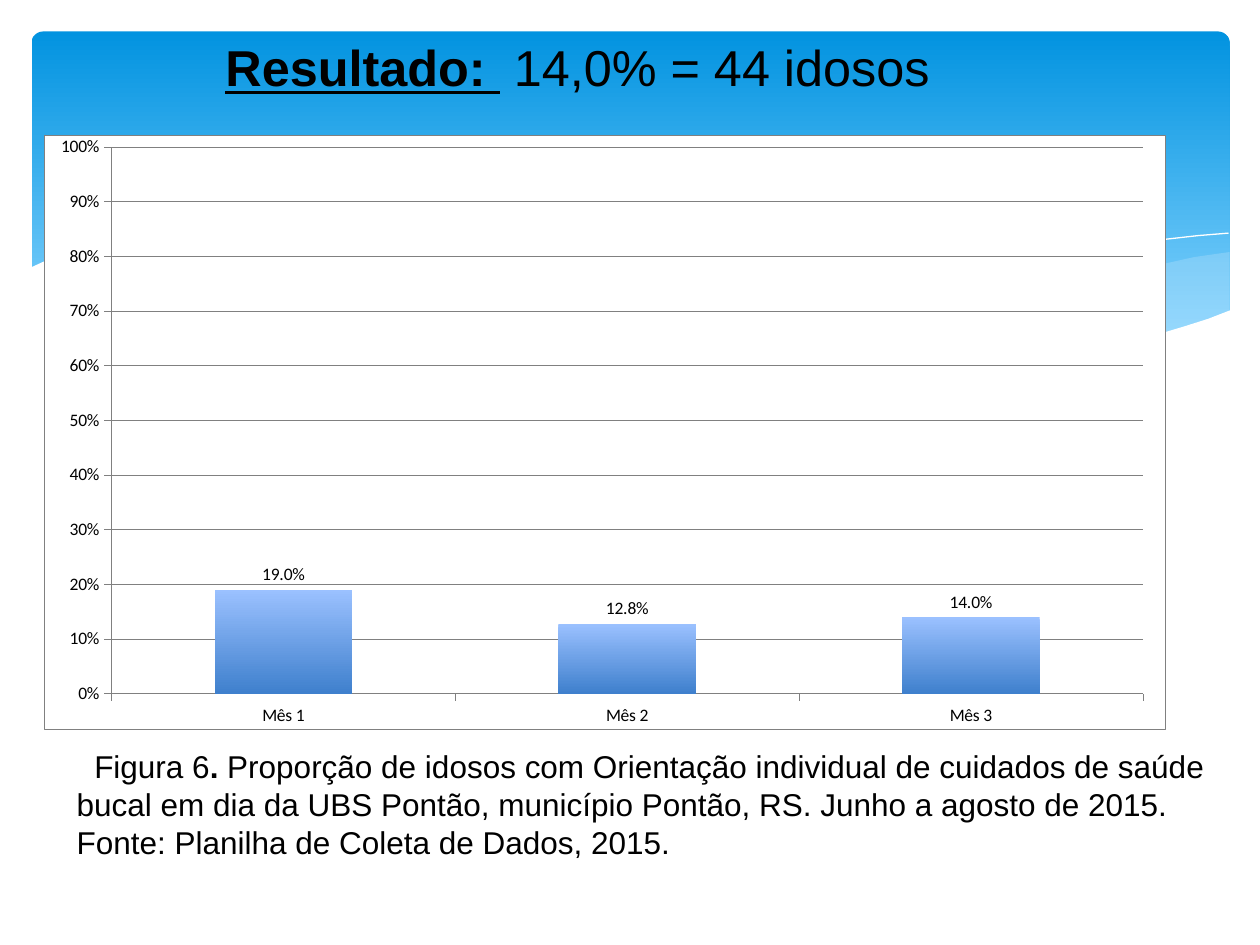
from lxml import etree
from pptx import Presentation
from pptx.chart.data import CategoryChartData
from pptx.dml.color import RGBColor
from pptx.enum.chart import XL_CHART_TYPE, XL_LABEL_POSITION, XL_TICK_MARK
from pptx.enum.shapes import MSO_SHAPE
from pptx.enum.text import MSO_ANCHOR, MSO_AUTO_SIZE, PP_ALIGN
from pptx.oxml import parse_xml
from pptx.oxml.ns import nsdecls, qn
from pptx.util import Inches, Pt

COLUMNS = XL_CHART_TYPE.COLUMN_CLUSTERED
OUTSIDE_END = XL_LABEL_POSITION.OUTSIDE_END
TICK_OUT = XL_TICK_MARK.OUTSIDE
ROUNDED = MSO_SHAPE.ROUNDED_RECTANGLE
MIDDLE = MSO_ANCHOR.MIDDLE
NO_FIT, GROW = MSO_AUTO_SIZE.NONE, MSO_AUTO_SIZE.SHAPE_TO_FIT_TEXT
CENTER, LEFT = PP_ALIGN.CENTER, PP_ALIGN.LEFT

COLORS = {
    "text": "000000", "white": "FFFFFF", "wave": "C6E7FC", "axis": "808080",
    "banner_top": "0293E0", "banner_bottom": "83D3FE",
    "bar_top": "9BC1FF", "bar_bottom": "3F80CD",
}

RIGHT_WAVE = [
    (9.76, 2), (9.48, 2.04), (9.21, 2.1), (8.91, 2.16), (8.61, 2.23), (8.05, 2.37),
    (7.53, 2.48), (7.06, 2.57), (6.61, 2.65), (7.05, 2.71), (7.45, 2.75), (7.81, 2.77),
    (8.14, 2.78), (8.44, 2.77), (8.72, 2.74), (8.97, 2.7), (9.21, 2.65), (9.42, 2.59),
    (9.63, 2.52), (9.76, 2.47)]
MIDDLE_WAVE = [
    (8.93, 2.73), (8.37, 2.65), (7.75, 2.54), (7.06, 2.4), (6.29, 2.22), (5.84, 2.11),
    (5.41, 2.03), (5.02, 1.96), (4.65, 1.91), (4.2, 1.87), (3.8, 1.85), (3.44, 1.86),
    (3.13, 1.88), (2.86, 1.91), (3.42, 1.99), (4.04, 2.11), (4.49, 2.22), (5.3, 2.4),
    (6.01, 2.55), (6.65, 2.66), (7.22, 2.74), (7.73, 2.77), (8.18, 2.78), (8.57, 2.77)]
LONG_CREST = [
    (3.09, 1.95), (3.44, 1.9), (3.87, 1.87), (4.33, 1.87), (4.89, 1.9), (5.56, 1.97),
    (6.08, 2.04), (6.65, 2.13), (7.27, 2.26), (7.95, 2.41), (8.69, 2.61), (9.07, 2.72)]
SHORT_CREST = [
    (6.13, 2.57), (6.53, 2.46), (6.95, 2.35), (7.48, 2.23), (8.06, 2.1), (8.66, 1.99),
    (8.95, 1.94), (9.24, 1.9), (9.51, 1.87), (9.75, 1.85)]
WHITE_BASE = [
    (9.77, 2.46), (9.59, 2.53), (9.4, 2.59), (9.2, 2.65), (8.99, 2.69), (8.75, 2.73),
    (8.5, 2.75), (8.09, 2.77), (7.61, 2.75), (7.08, 2.7), (6.48, 2.62), (5.79, 2.5),
    (5.03, 2.33), (4.47, 2.2), (3.91, 2.07), (3.4, 1.97), (2.92, 1.9), (2.5, 1.86),
    (1.93, 1.84), (1.46, 1.85), (1.06, 1.89), (0.76, 1.95), (0.52, 2.01), (0.36, 2.07),
    (0.23, 2.13), (0.23, 3.29), (9.77, 3.29)]


class SlideMaker:
    """Holds the style and the current slide, with a method per kind of element."""

    def __init__(self, slide):
        self.slide = slide
        self.shapes = slide.shapes

    def color(self, key):
        return RGBColor.from_string(COLORS[key])

    def style(self, font, values):
        for name, value in values.items():
            setattr(font, name, value)
        font.color.rgb = self.color("text")

    def gradient(self, fill, stops):
        fill.gradient()
        fill.gradient_angle = 270
        for stop, (position, key) in zip(fill.gradient_stops, stops):
            stop.position = position
            stop.color.rgb = self.color(key)

    def hairline(self, line):
        line.color.rgb = self.color("axis")
        line.width = Pt(0.25)

    def banner(self, box, stops):
        banner = self.shapes.add_shape(ROUNDED, *map(Inches, box))
        banner.adjustments[0] = 0.034
        banner.shadow.inherit = False
        banner.line.fill.background()
        self.gradient(banner.fill, stops)

    def outline(self, points, closed):
        start, *rest = [(Inches(x), Inches(y)) for x, y in points]
        builder = self.shapes.build_freeform(*start)
        builder.add_line_segments(rest, close=closed)
        outline = builder.convert_to_shape()
        outline.shadow.inherit = False
        return outline

    def wave(self, points, key, opacity=100):
        wave = self.outline(points, True)
        wave.line.fill.background()
        wave.fill.solid()
        wave.fill.fore_color.rgb = self.color(key)
        if opacity < 100:
            tint = wave._element.spPr.find(".//" + qn("a:srgbClr"))
            etree.SubElement(tint, qn("a:alpha"), val=str(opacity * 1000))

    def crest(self, points):
        crest = self.outline(points, False)
        crest.fill.background()
        crest.line.color.rgb = self.color("white")
        crest.line.width = Pt(0)

    def fill_text(self, frame, runs, align):
        paragraph = frame.paragraphs[0]
        paragraph.alignment = align
        for text, values in runs:
            run = paragraph.add_run()
            run.text = text
            self.style(run.font, {"name": "Arial", **values})
        return paragraph

    def title(self, box, runs):
        title = self.shapes.title
        title.left, title.top, title.width, title.height = map(Inches, box)
        frame = title.text_frame
        frame.auto_size, frame.vertical_anchor = NO_FIT, MIDDLE
        self.fill_text(frame, runs, CENTER)
        self.shapes._spTree.append(title._element)

    def caption(self, box, runs, indent):
        frame = self.shapes.add_textbox(*map(Inches, box)).text_frame
        frame.word_wrap, frame.auto_size = True, GROW
        paragraph = self.fill_text(frame, runs, LEFT)
        paragraph._p.get_or_add_pPr().set("indent", str(Inches(indent)))

    def panel(self, border):
        line = (f'<a:ln w="3175"><a:solidFill><a:srgbClr val="{COLORS["axis"]}"/></a:solidFill></a:ln>'
                if border else "<a:ln><a:noFill/></a:ln>")
        return parse_xml(
            f'<c:spPr {nsdecls("c", "a")}><a:solidFill><a:srgbClr val="{COLORS["white"]}"/>'
            f"</a:solidFill>{line}</c:spPr>")

    def plot_layout(self, plot_area, x, y, w, h):
        for old in plot_area.findall(qn("c:layout")):
            plot_area.remove(old)
        sizes = "".join(f'<c:{name} val="{value}"/>' for name, value in zip("xywh", (x, y, w, h)))
        plot_area.insert(0, parse_xml(
            f'<c:layout {nsdecls("c")}><c:manualLayout><c:layoutTarget val="inner"/>'
            f'<c:xMode val="edge"/><c:yMode val="edge"/>{sizes}</c:manualLayout></c:layout>'))

    def column_chart(self, box, categories, values, stops):
        data = CategoryChartData()
        data.categories = categories
        data.add_series("Series 1", values)
        chart = self.shapes.add_chart(COLUMNS, *map(Inches, box), data).chart
        chart.has_legend = chart.has_title = False
        self.style(chart.font, {"name": "Calibri", "size": Pt(10)})

        for axis in (chart.category_axis, chart.value_axis):
            axis.major_tick_mark = TICK_OUT
            self.hairline(axis.format.line)
        scale = chart.value_axis
        scale.minimum_scale, scale.maximum_scale, scale.major_unit = 0, 1, 0.1
        scale.tick_labels.number_format = "0%"
        scale.tick_labels.number_format_is_linked = False
        self.hairline(scale.major_gridlines.format.line)

        plot = chart.plots[0]
        plot.gap_width, plot.vary_by_categories = 150, False
        self.gradient(plot.series[0].format.fill, stops)
        plot.has_data_labels = True
        labels = plot.data_labels
        labels.show_value, labels.position = True, OUTSIDE_END
        labels.number_format, labels.number_format_is_linked = "0.0%", False

        body = chart._chartSpace.find(qn("c:chart"))
        body.addnext(self.panel(True))
        plot_area = body.find(qn("c:plotArea"))
        self.plot_layout(plot_area, 0.06, 0.02, 0.92, 0.92)
        plot_area.append(self.panel(False))


def main():
    deck = Presentation()
    deck.slide_width, deck.slide_height = Inches(10), Inches(7.5)
    maker = SlideMaker(deck.slides.add_slide(deck.slide_layouts[5]))

    maker.banner((0.25, 0.25, 9.51, 2.7), [(0, "banner_top"), (0.9, "banner_bottom")])
    maker.wave(RIGHT_WAVE, "wave", 29)
    maker.wave(MIDDLE_WAVE, "wave", 40)
    for crest in (LONG_CREST, SHORT_CREST):
        maker.crest(crest)
    maker.wave(WHITE_BASE, "white")

    maker.title((0.5, 0.3, 8.17, 0.46), [
        ("Resultado: ", {"size": Pt(28.8), "bold": True, "underline": True}),
        (" 14,0% = 44 idosos", {"size": Pt(28.8), "bold": False})])
    maker.caption((0.51, 5.88, 9.33, 1.04), [
        ("Figura 6", {"size": Pt(18)}),
        (".", {"size": Pt(18), "bold": True}),
        (" Proporção de idosos com Orientação individual de cuidados de saúde bucal em dia "
         "da UBS Pontão, município Pontão, RS. Junho a agosto de 2015. "
         "Fonte: Planilha de Coleta de Dados, 2015.", {"size": Pt(18)})], 0.14)
    maker.column_chart((0.35, 1.07, 8.9, 4.72), ["Mês 1", "Mês 2", "Mês 3"],
                       [0.19, 0.128, 0.14], [(0, "bar_top"), (1, "bar_bottom")])
    deck.save("out.pptx")


if __name__ == "__main__":
    main()
